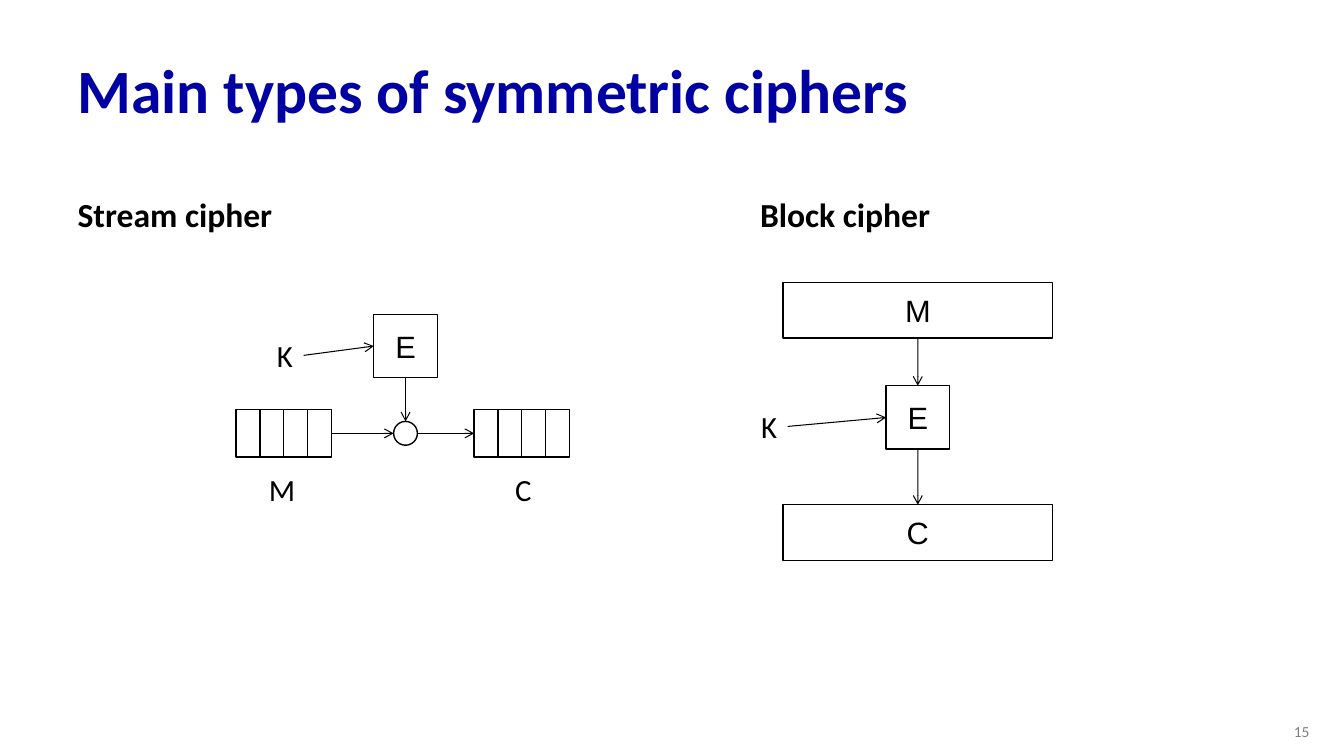
import pptx
import pptx.dml.color
import pptx.enum.shapes
import pptx.enum.text
import pptx.oxml
import pptx.oxml.ns
import pptx.util

Cm = pptx.util.Cm
Pt = pptx.util.Pt
Preset = pptx.enum.shapes.MSO_SHAPE
Align = pptx.enum.text.PP_ALIGN
Anchor = pptx.enum.text.MSO_ANCHOR
AutoSize = pptx.enum.text.MSO_AUTO_SIZE
TOP, LEFT, BOTTOM, RIGHT = range(4)


def rgb(code):
    return pptx.dml.color.RGBColor.from_string(code)


def write(frame, text, size=22, font="Calibri", color="000000", bold=False,
          align=Align.LEFT, anchor=Anchor.TOP, wrap=True, grow=False,
          line_spacing=None, space_before=None):
    frame.text = text
    frame.word_wrap = wrap
    frame.auto_size = AutoSize.SHAPE_TO_FIT_TEXT if grow else AutoSize.NONE
    frame.vertical_anchor = anchor
    paragraph = frame.paragraphs[0]
    paragraph.alignment = align
    paragraph.line_spacing = line_spacing
    if space_before is not None:
        paragraph.space_before = Pt(space_before)
    style = paragraph.runs[0].font
    style.name, style.size, style.bold = font, Pt(size), bold
    style.color.rgb = rgb(color)


class CipherSlide:
    ink = "000000"
    paper = "FFFFFF"
    title_color = "0000A3"
    number_color = "808080"

    def __init__(self, slide):
        self.slide = slide
        self.shapes = slide.shapes

    def heading(self, index, text, left, top, width, height, **style):
        """Move and fill the placeholder with this index."""
        holder = self.slide.placeholders[index]
        holder.left, holder.top = Cm(left), Cm(top)
        holder.width, holder.height = Cm(width), Cm(height)
        write(holder.text_frame, text, bold=True, line_spacing=0.9, **style)

    def label(self, text, left, top, width, height, **style):
        box = self.shapes.add_textbox(Cm(left), Cm(top), Cm(width), Cm(height))
        write(box.text_frame, text, **style)
        return box

    def symbol(self, text, left, top, width):
        return self.label(text, left, top, width, 1.19, wrap=False, grow=True)

    def box(self, left, top, width, height, text="", preset=Preset.RECTANGLE):
        shape = self.shapes.add_shape(preset, Cm(left), Cm(top), Cm(width), Cm(height))
        shape.shadow.inherit = False
        shape.fill.solid()
        shape.fill.fore_color.rgb = rgb(self.paper)
        shape.line.color.rgb = rgb(self.ink)
        shape.line.width = Pt(1)
        if text:
            write(shape.text_frame, text, font="Arial",
                  align=Align.CENTER, anchor=Anchor.MIDDLE)
        return shape

    def register(self, left, top, cell_width=0.6, cell_height=1.2, count=4):
        """Draw a row of cells and return them from left to right."""
        return [self.box(left + i * cell_width, top, cell_width, cell_height)
                for i in range(count)]

    def arrow(self, start, end):
        """Join two ends, each a (shape, site) pair or a point in cm."""
        line = self.shapes.add_connector(
            pptx.enum.shapes.MSO_CONNECTOR.STRAIGHT, 0, 0, 0, 0)
        if isinstance(start[0], float):
            line.begin_x, line.begin_y = map(Cm, start)
        else:
            line.begin_connect(*start)
        if isinstance(end[0], float):
            line.end_x, line.end_y = map(Cm, end)
        else:
            line.end_connect(*end)
        line.line.color.rgb = rgb(self.ink)
        line.line.width = Pt(0.75)
        head = pptx.oxml.parse_xml(
            f'<a:tailEnd {pptx.oxml.ns.nsdecls("a")} type="arrow"/>')
        line.line._get_or_add_ln().append(head)
        line._element.spPr.append(pptx.oxml.parse_xml(
            f'<a:effectLst {pptx.oxml.ns.nsdecls("a")}/>'))

    def stream_cipher(self):
        encrypt = self.box(9.42, 7.92, 1.6, 1.6, "E")
        message = self.register(5.95, 10.32)
        ciphertext = self.register(11.95, 10.32)
        mix_left, mix_right, mix_middle = 9.92, 10.52, 10.92
        mixer = self.box(mix_left, 10.62, 0.6, 0.6, preset=Preset.OVAL)
        key = self.symbol("K", 6.73, 8.36, 0.92)
        self.symbol("M", 6.53, 11.73, 1.17)
        self.symbol("C", 12.73, 11.73, 0.94)
        self.arrow((key, RIGHT), (encrypt, LEFT))
        self.arrow((encrypt, BOTTOM), (mixer, TOP))
        self.arrow((message[-1], RIGHT), (mix_left, mix_middle))
        self.arrow((mix_right, mix_middle), (ciphertext[0], LEFT))

    def block_cipher(self):
        message = self.box(19.73, 7.12, 6.8, 1.4, "M")
        ciphertext = self.box(19.73, 12.72, 6.8, 1.4, "C")
        encrypt = self.box(22.33, 9.72, 1.6, 1.6, "E")
        key = self.symbol("K", 18.93, 10.15, 0.92)
        self.arrow((key, RIGHT), (encrypt, LEFT))
        self.arrow((message, BOTTOM), (encrypt, TOP))
        self.arrow((encrypt, BOTTOM), (ciphertext, TOP))


def main():
    deck = pptx.Presentation()
    deck.slide_width, deck.slide_height = Cm(33.87), Cm(19.05)
    comparison = deck.slide_layouts.get_by_name("Comparison")
    page = CipherSlide(deck.slides.add_slide(comparison))
    page.heading(0, "Main types of symmetric ciphers", 1.7, 0.76, 30.48, 3.18,
                 size=44, color=page.title_color, anchor=Anchor.MIDDLE)
    for index, text, left, width in ((1, "Stream cipher", 1.7, 14.96),
                                     (3, "Block cipher", 18.9, 9.83)):
        page.heading(index, text, left, 4.27, width, 1.78,
                     size=24, anchor=Anchor.BOTTOM, space_before=10)
    for holder in list(page.slide.placeholders):
        if not holder.has_text_frame or not holder.text_frame.text:
            holder._element.getparent().remove(holder._element)
    page.label("15", 26.77, 17.91, 6.48, 1.02, size=11, color=page.number_color,
               align=Align.RIGHT, anchor=Anchor.MIDDLE)
    page.stream_cipher()
    page.block_cipher()
    deck.save("out.pptx")


if __name__ == "__main__":
    main()
